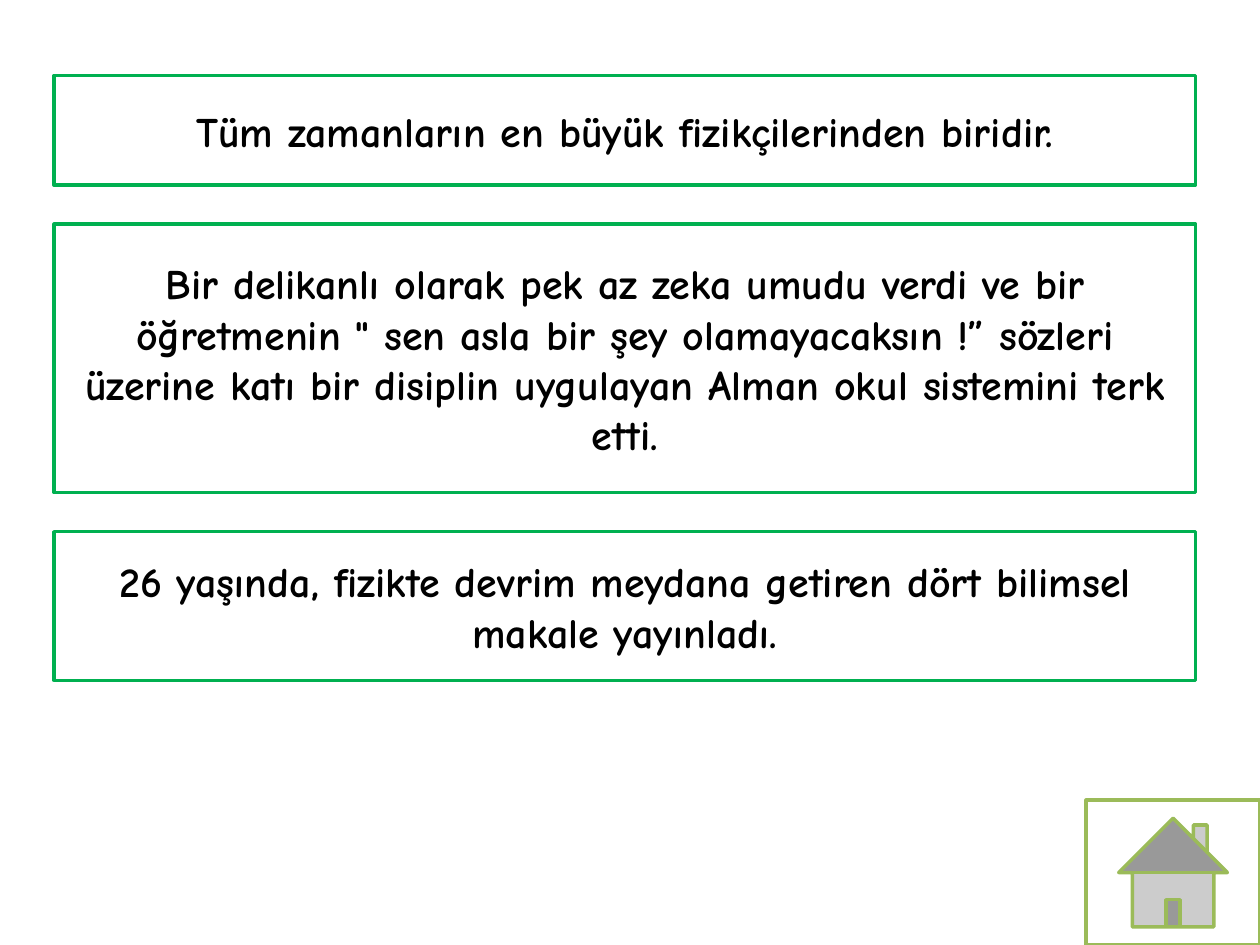
from dataclasses import dataclass

from pptx import Presentation
from pptx import util as u
from pptx.dml.color import RGBColor
from pptx.enum import shapes, text

WHITE = RGBColor(0xFF, 0xFF, 0xFF)
BLACK = RGBColor(0x00, 0x00, 0x00)
GREEN = RGBColor(0x00, 0xB0, 0x50)
OLIVE = RGBColor(0x9B, 0xBB, 0x59)

LEFT, TOP, WIDTH, GAP = 0.43, 0.6, 9.06, 0.31
FACT_FONT = {"name": "Comic Neue", "size": u.Pt(24), "bold": True}


@dataclass
class Fact:
    height: float
    wording: str


FACTS = [
    Fact(0.87, "Tüm zamanların en büyük fizikçilerinden biridir."),
    Fact(2.13, "Bir delikanlı olarak pek az zeka umudu verdi ve bir öğretmenin "
               "\" sen asla bir şey olamayacaksın !” sözleri üzerine katı bir "
               "disiplin uygulayan Alman okul sistemini terk etti."),
    Fact(1.18, "26 yaşında, fizikte devrim meydana getiren dört bilimsel "
               "makale yayınladı."),
]


def add_outlined(page, kind, left: float, top: float, width: float,
                 height: float, color: RGBColor):
    """Add a white shape with a 2 pt outline."""
    box = page.shapes.add_shape(kind, u.Inches(left), u.Inches(top),
                                u.Inches(width), u.Inches(height))
    box.shadow.inherit = False
    box.fill.solid()
    box.fill.fore_color.rgb = WHITE
    box.line.color.rgb = color
    box.line.width = u.Pt(2)
    return box


def add_fact(page, fact: Fact, top: float) -> None:
    """Add one framed, centred statement."""
    box = add_outlined(page, shapes.MSO_SHAPE.RECTANGLE, LEFT, top,
                       WIDTH, fact.height, GREEN)
    frame = box.text_frame
    frame.word_wrap = True
    frame.vertical_anchor = text.MSO_ANCHOR.MIDDLE
    para = frame.paragraphs[0]
    para.alignment = text.PP_ALIGN.CENTER
    span = para.add_run()
    span.text = fact.wording
    for name, value in FACT_FONT.items():
        setattr(span.font, name, value)
    span.font.color.rgb = BLACK


def main() -> None:
    deck = Presentation()
    deck.slide_width, deck.slide_height = u.Inches(10), u.Inches(7.5)
    page = deck.slides.add_slide(deck.slide_layouts[6])

    # Stacked statements with equal gaps
    top = TOP
    for fact in FACTS:
        add_fact(page, fact, top)
        top += fact.height + GAP

    # Home button in the bottom right corner
    add_outlined(page, shapes.MSO_SHAPE.ACTION_BUTTON_HOME,
                 8.62, 6.35, 1.38, 1.15, OLIVE)

    deck.save("out.pptx")


if __name__ == "__main__":
    main()
